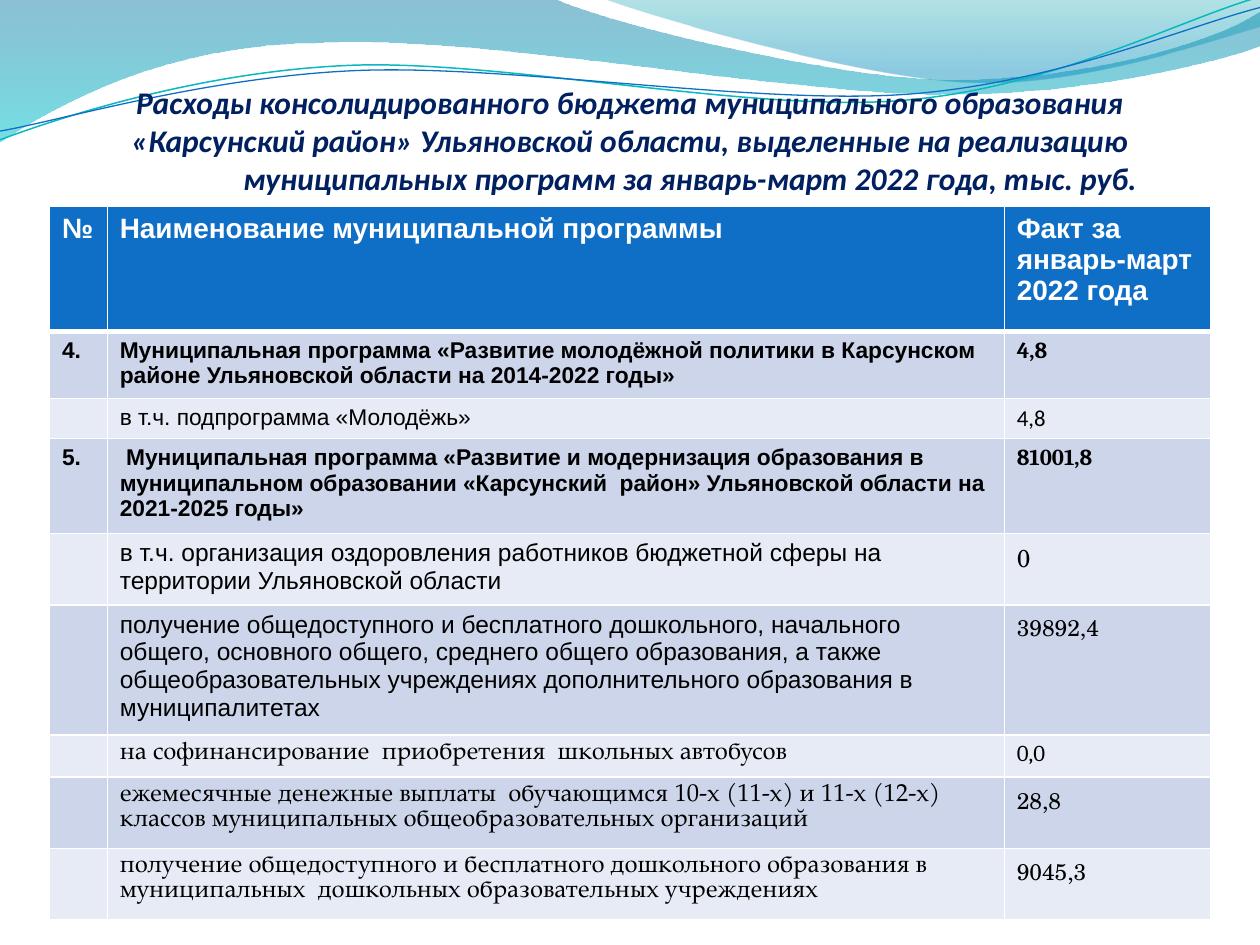
from dataclasses import dataclass
from typing import NamedTuple

from lxml import etree
from pptx import Presentation
from pptx import util as u
from pptx.dml.color import RGBColor
from pptx.enum import text
from pptx.oxml.ns import qn


@dataclass(frozen=True)
class Theme:
    navy: str = "002060"
    blue: str = "0F6FC6"
    teal: str = "0AB8BF"
    white: str = "FFFFFF"
    black: str = "000000"
    bands: tuple = ("CCD5EA", "E7EBF5")
    title: float = 18
    head: float = 16
    body: float = 14
    small: float = 13


T = Theme()
SANS, SERIF = "Arial", "Cambria"
BOOK, SCHOOL, PLAIN = "TeX Gyre Pagella", "TeX Gyre Schola", "Calibri"


class Stop(NamedTuple):
    pos: float
    color: str
    alpha: int


class Wave(NamedTuple):
    """Segments hold one point for a line, three for a Bezier curve."""
    start: tuple
    segs: list
    stops: tuple = ()
    color: str = ""
    width: float = 0


class Row(NamedTuple):
    high: float
    num: str
    name: str
    fact: str
    size: float = T.body
    font: str = SANS
    fact_size: float = T.small
    fact_font: str = SCHOOL
    bold: bool = False


WAVES = [
    Wave((0, -0.7),
         [[(316.8, -0.7)],
          [(342.7, 12.2), (478, 45.4), (545.8, 45.4)],
          [(614.2, 45.4), (689.8, 26.6), (720, 6.5)],
          [(720.7, 25.9)],
          [(707.8, 31.7), (626.4, 54.7), (537.1, 54)],
          [(447.8, 54), (275, 20.2), (185, 24.5)],
          [(92.9, 25.2), (33.1, 59.8), (-0.7, 81.4)]],
         (Stop(0, "0074A1", 45), Stop(1, "00C6CF", 55))),
    Wave((344.9, -0.7),
         [[(366.5, 7.9), (491, 44.6), (553.7, 46.8)],
          [(616.3, 49.7), (691.9, 23), (720, 15.1)],
          [(720, 0)]],
         (Stop(0, "00A1A9", 30), Stop(0.8, "008BBF", 45))),
    Wave((0, 79.9),
         [[(34.6, 67), (113.8, 41), (199.4, 37.4)],
          [(284.4, 33.8), (427, 64.1), (513.4, 57.6)],
          [(599.8, 51.1), (675.4, 10.8), (718.6, -1.4)]],
         color=T.teal, width=0.85),
    Wave((0, 74.9),
         [[(33.8, 69.1), (118, 43.9), (203.8, 40.3)],
          [(290.2, 36.7), (429.8, 59.8), (516.2, 54)],
          [(601.9, 48.2), (677.5, 15.1), (720, 4.3)]],
         color=T.blue, width=0.75),
]

TITLE = [
    ("Расходы консолидированного бюджета муниципального образования "
     "«Карсунский район» Ульяновской области, выделенные на реализацию", 0),
    ("муниципальных программ за январь-март 2022 года, тыс. руб.", 69),
]

ROWS = [
    Row(71.4, "№", "Наименование муниципальной программы",
        "Факт за январь-март 2022 года", T.head, SANS, T.head, SANS, True),
    Row(36.6, "4.", "Муниципальная программа «Развитие молодёжной политики в "
        "Карсунском районе Ульяновской области на 2014-2022 годы»", "4,8",
        T.small, fact_font=SERIF, bold=True),
    Row(22.6, "", "в т.ч. подпрограмма «Молодёжь»", "4,8",
        T.small, fact_font=PLAIN),
    Row(51.4, "5.", " Муниципальная программа «Развитие и модернизация "
        "образования в  муниципальном образовании «Карсунский  район» "
        "Ульяновской области на 2021-2025 годы»", "81001,8",
        T.small, fact_font=SERIF, bold=True),
    Row(39.2, "", "в т.ч. организация оздоровления работников бюджетной сферы "
        "на территории Ульяновской области", "0", fact_size=T.body),
    Row(70.3, "", "получение общедоступного и бесплатного дошкольного, "
        "начального общего, основного общего, среднего общего образования, "
        "а также общеобразовательных учреждениях дополнительного образования "
        "в муниципалитетах", "39892,4"),
    Row(22.9, "", "на софинансирование  приобретения  школьных автобусов",
        "0,0", font=BOOK, fact_font=SERIF),
    Row(38.9, "", "ежемесячные денежные выплаты  обучающимся 10-х (11-х) и "
        "11-х (12-х) классов муниципальных общеобразовательных организаций",
        "28,8", font=BOOK),
    Row(38.9, "", "получение общедоступного и бесплатного дошкольного "
        "образования в муниципальных  дошкольных образовательных учреждениях",
        "9045,3", font=BOOK),
]


def write(para, words: str, *, size: float, font: str, color: str,
          bold=False, italic=False, align=None) -> None:
    if align is not None:
        para.alignment = align
    if not words:
        para._p.get_or_add_endParaRPr().set("sz", str(int(size * 100)))
        return
    run = para.add_run()
    run.text = words
    face = run.font
    face.name, face.size = font, u.Pt(size)
    face.bold, face.italic = bold, italic
    face.color.rgb = RGBColor.from_string(color)


def bend(form, wave: Wave) -> None:
    """Join the three lines of each curved segment into one Bezier."""
    lines = iter(list(form._element.spPr.iter(qn("a:lnTo"))))
    for seg in wave.segs:
        parts = [next(lines) for _ in seg]
        if len(seg) == 3:
            curve = etree.Element(qn("a:cubicBezTo"))
            parts[0].addprevious(curve)
            for part in parts:
                curve.append(part[0])
                part.getparent().remove(part)


def draw_wave(slide, wave: Wave) -> None:
    pen = slide.shapes.build_freeform(*map(u.Pt, wave.start))
    pen.add_line_segments([(u.Pt(x), u.Pt(y)) for seg in wave.segs
                           for x, y in seg], close=bool(wave.stops))
    form = pen.convert_to_shape()
    bend(form, wave)
    form.shadow.inherit = False
    if not wave.stops:
        form.fill.background()
        form.line.color.rgb = RGBColor.from_string(wave.color)
        form.line.width = u.Pt(wave.width)
        return
    form.line.fill.background()
    form.fill.gradient()
    form.fill.gradient_angle = 270
    for stop, mark in zip(wave.stops, form.fill.gradient_stops):
        mark.position = stop.pos
        mark.color.rgb = RGBColor.from_string(stop.color)
    tints = form._element.spPr.find(qn("a:gradFill")).iter(qn("a:srgbClr"))
    for stop, tint in zip(wave.stops, tints):
        etree.SubElement(tint, qn("a:alpha")).set("val", str(stop.alpha * 1000))


def draw_title(slide) -> None:
    box = slide.shapes.add_textbox(u.Pt(36), u.Pt(44.6), u.Pt(648), u.Pt(67.7))
    frame = box.text_frame
    frame.word_wrap = True
    frame.vertical_anchor = text.MSO_ANCHOR.BOTTOM
    frame.margin_left = frame.margin_right = frame.margin_bottom = 0
    for i, (words, shift) in enumerate(TITLE):
        para = frame.add_paragraph() if i else frame.paragraphs[0]
        write(para, words, size=T.title, font=PLAIN, color=T.navy,
              bold=True, italic=True, align=text.PP_ALIGN.CENTER)
        para._p.get_or_add_pPr().set("marL", str(u.Pt(shift)))


def edge(cell, side: str, width: float) -> None:
    line = etree.SubElement(cell._tc.get_or_add_tcPr(), qn("a:ln" + side))
    line.set("w", str(u.Pt(width)))
    fill = etree.SubElement(line, qn("a:solidFill"))
    etree.SubElement(fill, qn("a:srgbClr")).set("val", T.white)


def draw_table(slide) -> None:
    wide = (33, 512.6, 118)
    grid = slide.shapes.add_table(
        len(ROWS), len(wide), u.Pt(28.3), u.Pt(118), u.Pt(sum(wide)),
        u.Pt(sum(row.high for row in ROWS))).table
    for col, width in zip(grid.columns, wide):
        col.width = u.Pt(width)
    for r, row in enumerate(ROWS):
        grid.rows[r].height = u.Pt(row.high)
        cells = ((row.num, row.size, SANS), (row.name, row.size, row.font),
                 (row.fact, row.fact_size, row.fact_font))
        for c, (words, size, font) in enumerate(cells):
            cell = grid.cell(r, c)
            for side in "LRTB":
                thick = (r, side) in ((0, "B"), (1, "T"))
                edge(cell, side, 3 if thick else 1)
            cell.fill.solid()
            shade = T.bands[(r - 1) % 2] if r else T.blue
            cell.fill.fore_color.rgb = RGBColor.from_string(shade)
            write(cell.text_frame.paragraphs[0], words, size=size, font=font,
                  color=T.black if r else T.white, bold=row.bold)


def main() -> None:
    deck = Presentation()
    deck.slide_width, deck.slide_height = u.Pt(720), u.Pt(540)
    slide = deck.slides.add_slide(deck.slide_layouts[6])
    for wave in WAVES:
        draw_wave(slide, wave)
    draw_title(slide)
    draw_table(slide)
    deck.save("out.pptx")


if __name__ == "__main__":
    main()
